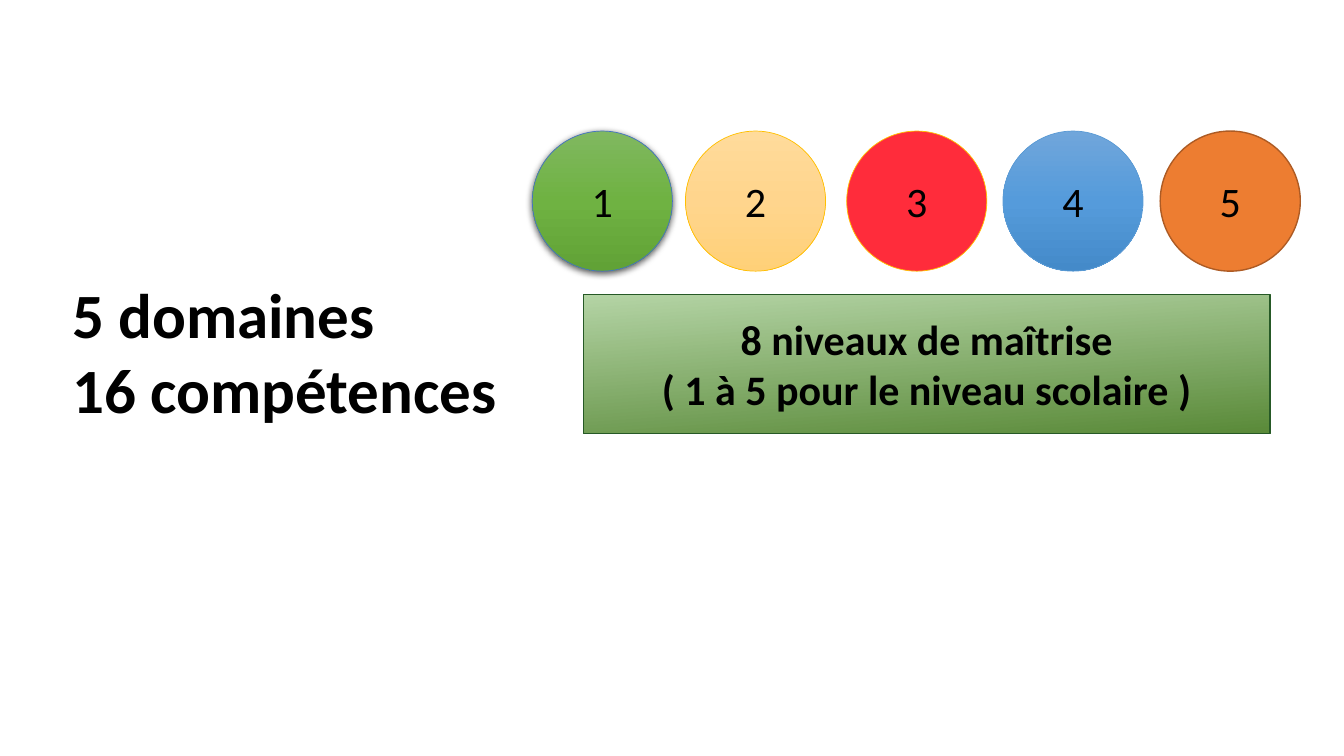
from lxml import etree
from pptx import Presentation
from pptx.dml.color import RGBColor
from pptx.enum import shapes, text
from pptx.oxml import ns
from pptx.util import Pt

COLORS = {
    "text": "000000",
    "red": "FF2C3B",
    "orange": "ED7D31",
    "blue_line": "4472C4",
    "gold_line": "FFC000",
    "sky_line": "5B9BD5",
    "orange_line": "AD5B24",
    "level_line": "265926",
    "shadow": "000000",
}
GRADIENTS = {
    "green": ["80B860", "6FB242", "61A236"],
    "yellow": ["FFDB9B", "FFD58D", "FFD078"],
    "sky": ["70A6DB", "559BDB", "448AC9"],
    "level": ["B4D4A5", "5A8A39"],
}
# Left edge, fill, line colour and line width of each domain
DOMAINS = [
    (380.2, "green", "blue_line", 0.5),
    (489.6, "yellow", "gold_line", 0.5),
    (604.8, "red", "gold_line", 0.5),
    (716.4, "sky", "sky_line", 0.5),
    (828.7, "orange", "orange_line", 1),
]
CIRCLE_TOP, CIRCLE_SIZE = 93.6, 100.1
LABEL_WIDTH, LABEL_HEIGHT = 24, 44


def add_child(parent, tag, **attributes):
    return etree.SubElement(parent, ns.qn(tag), **attributes)


def fill_gradient(shape, stops, angle):
    shape.fill.gradient()
    shape.fill.gradient_angle = 360 - angle
    stop_list = shape._element.spPr.find(".//" + ns.qn("a:gsLst"))
    for stop in list(stop_list):
        stop_list.remove(stop)
    for i, color in enumerate(stops):
        position = 100000 * i // (len(stops) - 1)
        stop = add_child(stop_list, "a:gs", pos=str(position))
        add_child(stop, "a:srgbClr", val=color)


def add_shadow(shape):
    effects = shape._element.spPr.find(ns.qn("a:effectLst"))
    shadow = add_child(effects, "a:outerShdw", blurRad=str(Pt(5)), dist=str(Pt(1.5)),
                       dir="5400000", rotWithShape="0")
    color = add_child(shadow, "a:srgbClr", val=COLORS["shadow"])
    add_child(color, "a:alpha", val="63000")


def add_filled(slide, kind, box, fill, line, line_width, angle=90):
    shape = slide.shapes.add_shape(kind, *map(Pt, box))
    shape.shadow.inherit = False
    if fill in GRADIENTS:
        fill_gradient(shape, GRADIENTS[fill], angle)
    else:
        shape.fill.solid()
        shape.fill.fore_color.rgb = RGBColor.from_string(COLORS[fill])
    shape.line.color.rgb = RGBColor.from_string(COLORS[line])
    shape.line.width = Pt(line_width)
    return shape


def write(shape, lines, size, bold=False, align=text.PP_ALIGN.CENTER,
          anchor=text.MSO_ANCHOR.MIDDLE, wrap=True):
    frame = shape.text_frame
    frame.text = "\n".join(lines)
    frame.word_wrap = wrap
    frame.auto_size = text.MSO_AUTO_SIZE.NONE
    frame.vertical_anchor = anchor
    frame.margin_left = frame.margin_right = Pt(3.6)
    frame.margin_top = frame.margin_bottom = Pt(3.6)
    for paragraph in frame.paragraphs:
        paragraph.alignment = align
        paragraph.font.name = "Calibri"
        paragraph.font.size = Pt(size)
        paragraph.font.bold = bold
        paragraph.font.color.rgb = RGBColor.from_string(COLORS["text"])


def add_title(slide, lines):
    title = slide.shapes.title
    title.left, title.top, title.width, title.height = map(Pt, (48.2, 193, 311, 117.4))
    write(title, lines, 45, bold=True, align=text.PP_ALIGN.LEFT,
          anchor=text.MSO_ANCHOR.TOP, wrap=False)


def add_number(slide, number, circle_left):
    left = circle_left + (CIRCLE_SIZE - LABEL_WIDTH) / 2
    top = CIRCLE_TOP + (CIRCLE_SIZE - LABEL_HEIGHT) / 2
    label = slide.shapes.add_textbox(Pt(left), Pt(top), Pt(LABEL_WIDTH), Pt(LABEL_HEIGHT))
    write(label, [str(number)], 30, anchor=text.MSO_ANCHOR.TOP, wrap=False)


def main():
    deck = Presentation()
    deck.slide_width, deck.slide_height = Pt(960), Pt(540)
    slide = deck.slides.add_slide(deck.slide_layouts[5])

    add_title(slide, ["5 domaines", "16 compétences"])

    # Numbered domains; the first one is raised by a shadow
    for number, (left, fill, line, line_width) in enumerate(DOMAINS, 1):
        box = (left, CIRCLE_TOP, CIRCLE_SIZE, CIRCLE_SIZE)
        circle = add_filled(slide, shapes.MSO_SHAPE.OVAL, box, fill, line, line_width)
        if number == 1:
            add_shadow(circle)
        add_number(slide, number, left)

    # Mastery levels
    levels = add_filled(slide, shapes.MSO_SHAPE.RECTANGLE, (416.9, 210.2, 490.3, 99.4),
                        "level", "level_line", 1, angle=86)
    write(levels, ["8 niveaux de maîtrise", "( 1 à 5 pour le niveau scolaire )"], 30, bold=True)

    deck.save("out.pptx")


if __name__ == "__main__":
    main()
